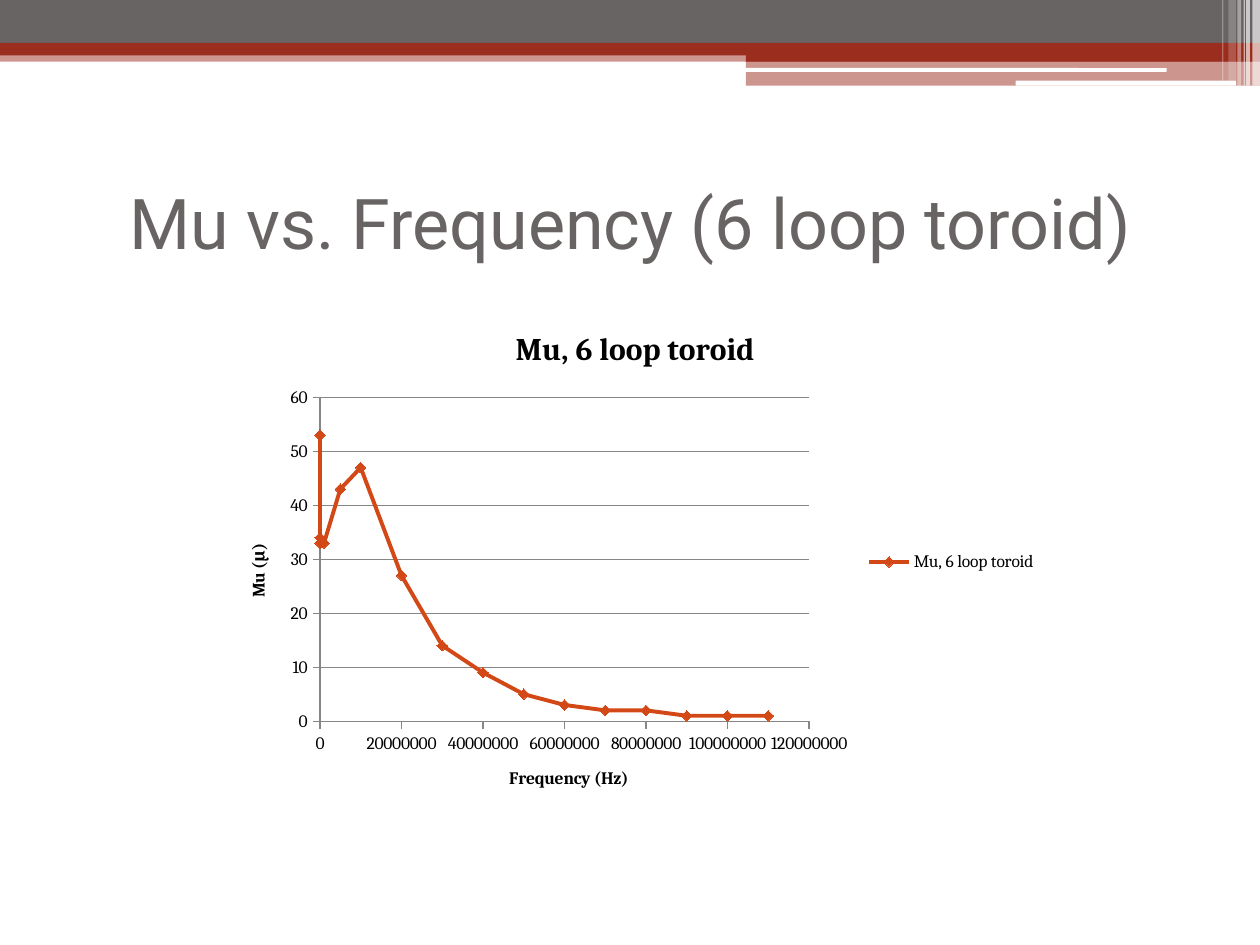
import pptx
import pptx.chart.data
import pptx.dml.color
import pptx.enum.chart
import pptx.enum.shapes
import pptx.enum.text
import pptx.oxml
import pptx.oxml.ns
import pptx.util
from lxml import etree

Inches = pptx.util.Inches
RGBColor = pptx.dml.color.RGBColor
GRAY = RGBColor(0x69, 0x64, 0x64)
RED = RGBColor(0x9B, 0x2D, 0x1F)
WHITE = RGBColor(0xFF, 0xFF, 0xFF)
BLACK = RGBColor(0, 0, 0)
ORANGE = RGBColor(0xD3, 0x48, 0x17)
GRID_GRAY = RGBColor(0x86, 0x86, 0x86)

BANDS = [
    (0, 0.4, 10, 0.09, RED, 50),
    (0, 0, 10, 0.34, GRAY, 100),
    (0, 0.34, 10, 0.1, RED, 100),
    (5.92, 0.39, 4.08, 0.1, RED, 100),
    (5.92, 0.48, 4.08, 0.2, RED, 50),
]
ROUNDED_BARS = [(5.91, 0.54, 3.35, 0.03), (8.06, 0.64, 1.75, 0.04)]
STRIPES = [
    (9.94, 0.06, 0.68, 65),
    (9.89, 0.03, 0.68, 65),
    (9.87, 0.01, 0.68, 60),
    (9.82, 0.03, 0.68, 40),
    (9.75, 0.06, 0.64, 20),
    (9.7, 0.01, 0.64, 30),
]
MEGAHERTZ = 1000000
FREQUENCIES = [0, 0, 0, 0, MEGAHERTZ, 5 * MEGAHERTZ] + [
    step * 10 * MEGAHERTZ for step in range(1, 12)
]
MU_VALUES = [53, 34, 34, 33, 33, 43, 47, 27, 14, 9, 5, 3, 2, 2, 1, 1, 1]
PLOT_LAYOUT = {"x": 0.12, "y": 0.18, "w": 0.59, "h": 0.63}


def apply_format(target, values):
    for name, value in values.items():
        setattr(target, name, value)


def format_font(font, color, **values):
    apply_format(font, values)
    font.color.rgb = color


def add_bar(slide, left, top, width, height, color, opacity=100, rounded=False):
    kinds = pptx.enum.shapes.MSO_SHAPE
    kind = kinds.ROUNDED_RECTANGLE if rounded else kinds.RECTANGLE
    shape = slide.shapes.add_shape(
        kind, Inches(left), Inches(top), Inches(width), Inches(height)
    )
    shape.shadow.inherit = False
    shape.line.fill.background()
    shape.fill.solid()
    shape.fill.fore_color.rgb = color
    if opacity < 100:
        color_element = shape.fill._xPr.find(".//" + pptx.oxml.ns.qn("a:srgbClr"))
        alpha = etree.SubElement(color_element, pptx.oxml.ns.qn("a:alpha"))
        alpha.set("val", str(opacity * 1000))


def add_header(slide):
    for band in BANDS:
        add_bar(slide, *band)
    for bar in ROUNDED_BARS:
        add_bar(slide, *bar, WHITE, rounded=True)
    for left, width, height, opacity in STRIPES:
        add_bar(slide, left, 0, width, height, WHITE, opacity)


def format_title(title, text):
    apply_format(title, {
        "left": Inches(0.5), "top": Inches(1.17),
        "width": Inches(9), "height": Inches(1.17),
    })
    title.text_frame.text = text
    title.text_frame.vertical_anchor = pptx.enum.text.MSO_ANCHOR.MIDDLE
    paragraph = title.text_frame.paragraphs[0]
    paragraph.alignment = pptx.enum.text.PP_ALIGN.CENTER
    format_font(paragraph.runs[0].font, GRAY, name="Roboto", size=pptx.util.Pt(40))


def set_heading(text_frame, text, size):
    text_frame.text = text
    font = text_frame.paragraphs[0].runs[0].font
    format_font(font, BLACK, name="Cambria", size=pptx.util.Pt(size), bold=True)


def format_axis(axis, text, maximum, unit, has_grid):
    apply_format(axis, {
        "minimum_scale": 0, "maximum_scale": maximum, "major_unit": unit,
        "has_major_gridlines": has_grid,
        "major_tick_mark": pptx.enum.chart.XL_TICK_MARK.OUTSIDE,
        "minor_tick_mark": pptx.enum.chart.XL_TICK_MARK.NONE,
    })
    lines = [axis.format.line]
    if has_grid:
        lines.append(axis.major_gridlines.format.line)
    for line in lines:
        line.color.rgb = GRID_GRAY
        line.width = pptx.util.Pt(0.75)
    set_heading(axis.axis_title.text_frame, text, 10)


def format_series(series):
    series.smooth = False
    series.format.line.color.rgb = ORANGE
    series.format.line.width = pptx.util.Pt(2.25)
    series.marker.style = pptx.enum.chart.XL_MARKER_STYLE.DIAMOND
    series.marker.size = 6
    series.marker.format.fill.solid()
    series.marker.format.fill.fore_color.rgb = ORANGE
    series.marker.format.line.color.rgb = ORANGE


def place_plot(chart):
    qualified = pptx.oxml.ns.qn
    plot_area = chart._chartSpace.chart.plotArea
    layout = plot_area.find(qualified("c:layout"))
    if layout is None:
        layout = plot_area.makeelement(qualified("c:layout"))
        plot_area.insert(0, layout)
    manual = etree.SubElement(layout, qualified("c:manualLayout"))
    settings = {"layoutTarget": "inner", "xMode": "edge", "yMode": "edge", **PLOT_LAYOUT}
    for name, value in settings.items():
        etree.SubElement(manual, qualified("c:" + name)).set("val", str(value))


def add_mu_chart(slide):
    name = "Mu, 6 loop toroid"
    data = pptx.chart.data.XyChartData()
    points = data.add_series(name)
    for frequency, mu in zip(FREQUENCIES, MU_VALUES):
        points.add_data_point(frequency, mu)
    chart = slide.shapes.add_chart(
        pptx.enum.chart.XL_CHART_TYPE.XY_SCATTER_LINES,
        Inches(1.75), Inches(2.42), Inches(6.58), Inches(4.08), data,
    ).chart
    format_font(chart.font, BLACK, name="Cambria", size=pptx.util.Pt(10))
    set_heading(chart.chart_title.text_frame, name, 18)
    chart.has_legend = True
    chart.legend.position = pptx.enum.chart.XL_LEGEND_POSITION.RIGHT
    chart.legend.include_in_layout = False
    chart.plots[0].vary_by_categories = False
    format_axis(chart.category_axis, "Frequency (Hz)", 120 * MEGAHERTZ, 20 * MEGAHERTZ, False)
    format_axis(chart.value_axis, "Mu (μ)", 60, 10, True)
    format_series(chart.plots[0].series[0])
    place_plot(chart)


def main():
    presentation = pptx.Presentation()
    presentation.slide_width = Inches(10)
    presentation.slide_height = Inches(7.5)
    slide = presentation.slides.add_slide(presentation.slide_layouts[5])
    add_header(slide)
    format_title(slide.shapes.title, "Mu vs. Frequency (6 loop toroid)")
    add_mu_chart(slide)
    presentation.save("out.pptx")


if __name__ == "__main__":
    main()
